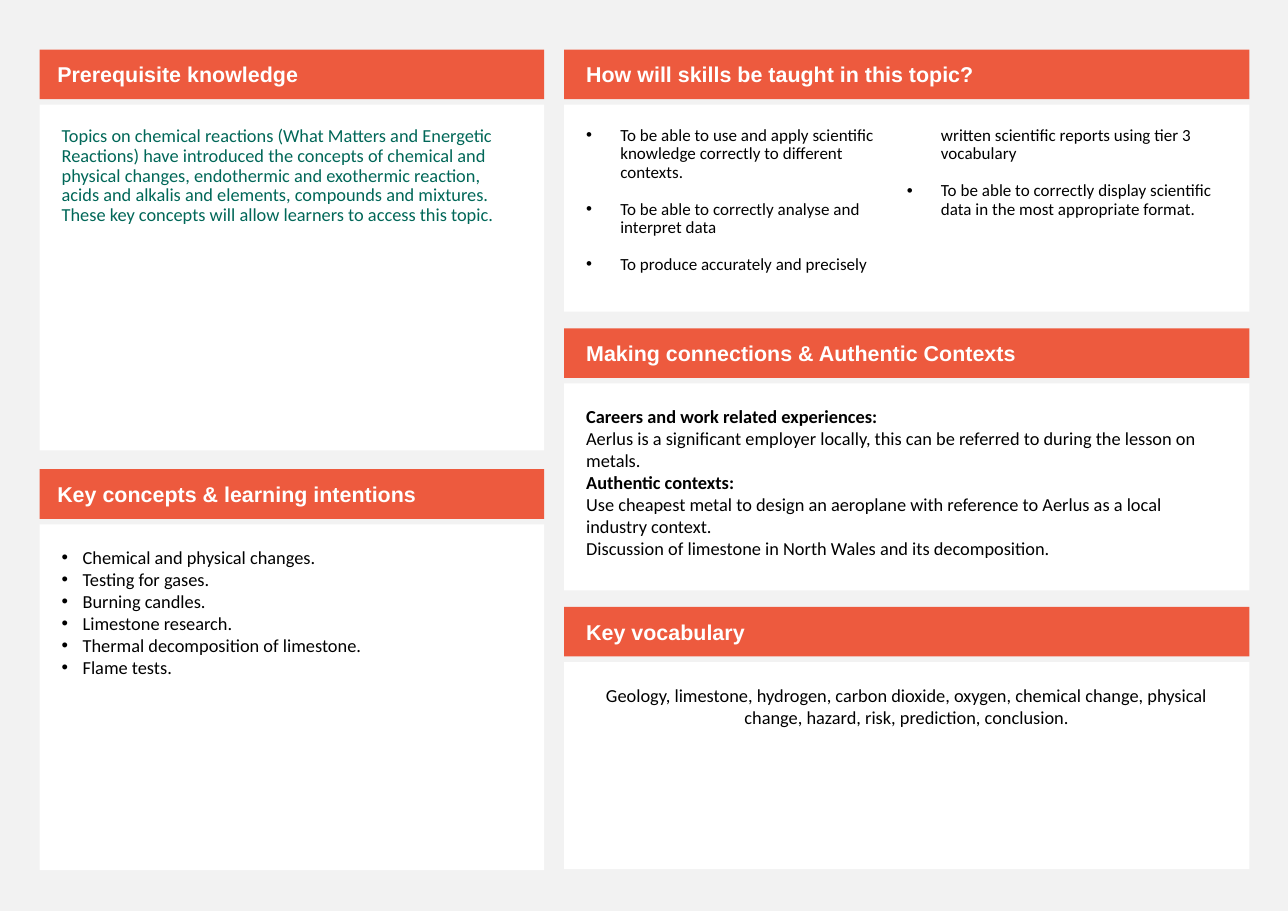
from dataclasses import dataclass

from pptx import Presentation
from pptx.dml.color import RGBColor
from pptx.enum.shapes import MSO_SHAPE as SHAPE
from pptx.enum.text import MSO_ANCHOR as ANCHOR, PP_ALIGN as ALIGN
from pptx.oxml.ns import qn
from pptx.util import Inches, Pt
from lxml.etree import SubElement


@dataclass(frozen=True)
class Theme:
    page: str = "F2F2F2"
    accent: str = "ED5A3E"
    panel: str = "FFFFFF"
    text: str = "000000"
    green: str = "006758"
    head_font: str = "Arial"
    body_font: str = "Calibri"
    head_size: float = 14
    body_size: float = 12
    small_size: float = 11.1


THEME = Theme()
TOP, HEAD_H, BODY_OFFSET = 0.45, 0.45, 0.5

PREREQUISITES = [
    "Topics on chemical reactions (What Matters and Energetic Reactions) have introduced "
    "the concepts of chemical and physical changes, endothermic and exothermic reaction, "
    "acids and alkalis and elements, compounds and mixtures. These key concepts will allow "
    "learners to access this topic."]
CONCEPTS = [
    "Chemical and physical changes.", "Testing for gases.", "Burning candles.",
    "Limestone research.", "Thermal decomposition of limestone.", "Flame tests."]
SKILLS = [
    "To be able to use and apply scientific knowledge correctly to different contexts.",
    "To be able to correctly analyse and interpret data",
    "To produce accurately and precisely written scientific reports using tier 3 vocabulary",
    "To be able to correctly display scientific data in the most appropriate format."]
CONNECTIONS = [
    "Careers and work related experiences:",
    "Aerlus is a significant employer locally, this can be referred to during the lesson on metals.",
    "Authentic contexts:",
    "Use cheapest metal to design an aeroplane with reference to Aerlus as a local industry context.",
    "Discussion of limestone in North Wales and its decomposition."]
VOCABULARY = [
    "Geology, limestone, hydrogen, carbon dioxide, oxygen, chemical change, physical change, "
    "hazard, risk, prediction, conclusion."]


def add_box(slide, box, color, insets, anchor):
    """Add a plain filled rectangle and return its text frame."""
    sp = slide.shapes.add_shape(SHAPE.RECTANGLE, *map(Inches, box))
    sp.shadow.inherit = False
    sp.fill.solid()
    sp.fill.fore_color.rgb = RGBColor.from_string(color)
    sp.line.fill.background()
    tf = sp.text_frame
    tf.word_wrap = True
    tf.vertical_anchor = anchor
    tf.margin_left, tf.margin_top, tf.margin_right, tf.margin_bottom = map(Inches, insets)
    return tf


def format_runs(p, font, size, color, bold=False):
    for r in p.runs:
        r.font.name = font
        r.font.size = Pt(size)
        r.font.bold = bold
        r.font.color.rgb = RGBColor.from_string(color)


def add_bullet(p, indent):
    pPr = p._p.get_or_add_pPr()
    pPr.set("marL", str(Inches(indent)))
    pPr.set("indent", str(-Inches(indent)))
    SubElement(pPr, qn("a:buFont"), typeface="Arial")
    SubElement(pPr, qn("a:buChar"), char="•")


def add_heading(slide, box, title, inset):
    tf = add_box(slide, box, THEME.accent, (inset, 0.05, 0.1, 0.05), ANCHOR.MIDDLE)
    tf.text = title
    p = tf.paragraphs[0]
    p.alignment = ALIGN.LEFT
    format_runs(p, THEME.head_font, THEME.head_size, THEME.panel, bold=True)


def add_body(slide, box, lines, size=THEME.body_size, color=THEME.text, align=ALIGN.LEFT,
             spacing=1.0, gap=0, indent=None, columns=1):
    tf = add_box(slide, box, THEME.panel, (0.2,) * 4, ANCHOR.TOP)
    tf.text = "\n".join(lines)
    if columns > 1:
        tf._txBody.bodyPr.set("numCol", str(columns))
    for i, p in enumerate(tf.paragraphs):
        p.alignment = align
        p.line_spacing = spacing
        p.space_before = Pt(gap if i else 0)
        if indent:
            add_bullet(p, indent)
        format_runs(p, THEME.body_font, size, color, bold=p.text.endswith(":"))


def add_column(slide, left, width, pitch, body_h, head_inset, sections):
    """Stack titled panels at an even pitch; each section is (title, lines, body style)."""
    for i, (title, lines, style) in enumerate(sections):
        top = TOP + i * pitch
        add_heading(slide, (left, top, width, HEAD_H), title, head_inset)
        add_body(slide, (left, top + BODY_OFFSET, width, body_h), lines, **style)


def main():
    prs = Presentation()
    prs.slide_width, prs.slide_height = Inches(11.69), Inches(8.27)
    slide = prs.slides.add_slide(prs.slide_layouts[6])
    slide.background.fill.solid()
    slide.background.fill.fore_color.rgb = RGBColor.from_string(THEME.page)

    add_column(slide, 0.36, 4.58, 3.81, 3.14, 0.16, [
        ("Prerequisite knowledge", PREREQUISITES, dict(color=THEME.green, spacing=0.9)),
        ("Key concepts & learning intentions", CONCEPTS, dict(indent=0.19)),
    ])
    add_column(slide, 5.12, 6.22, 2.53, 1.88, 0.2, [
        ("How will skills be taught in this topic?", SKILLS,
         dict(size=THEME.small_size, spacing=0.9, gap=12.2, indent=0.31, columns=2)),
        ("Making connections & Authentic Contexts", CONNECTIONS, {}),
        ("Key vocabulary", VOCABULARY, dict(align=ALIGN.CENTER)),
    ])
    prs.save("out.pptx")


if __name__ == "__main__":
    main()
